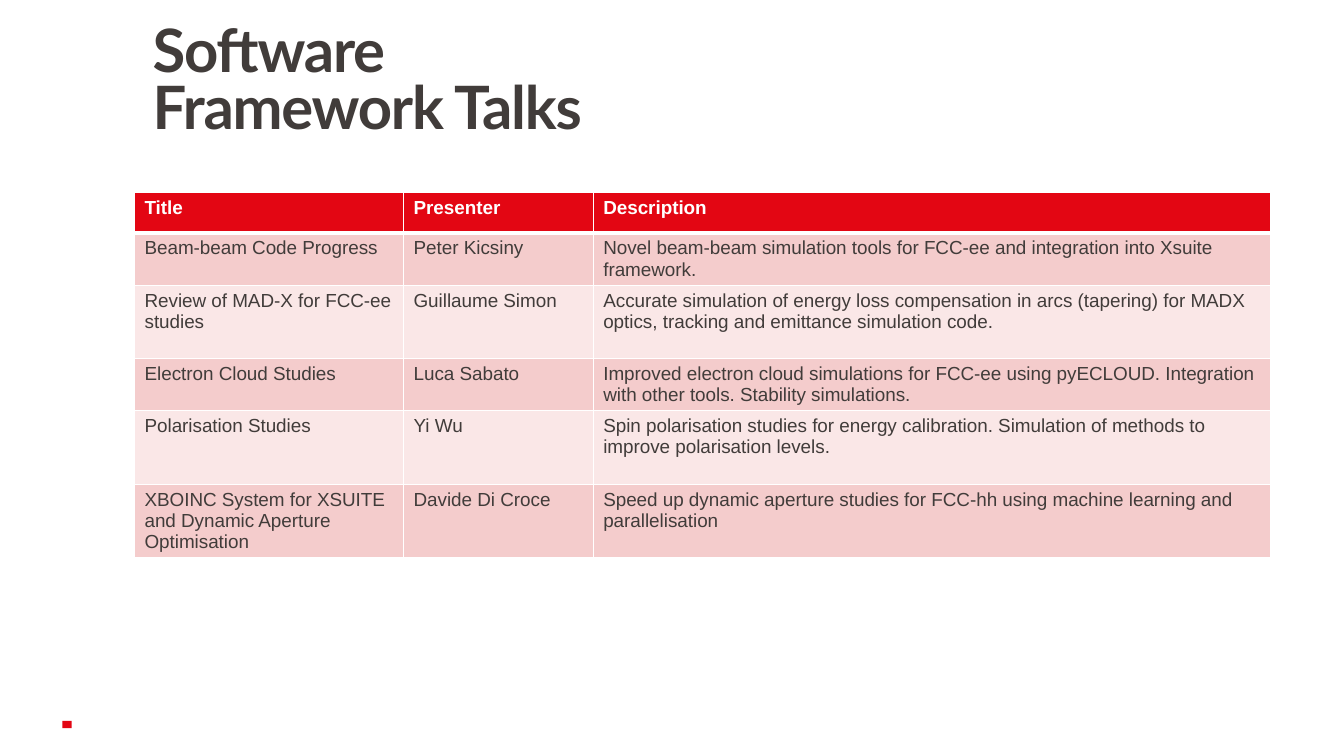
from lxml import etree
from pptx import Presentation
from pptx.dml.color import RGBColor
from pptx.enum.shapes import MSO_SHAPE
from pptx.enum.text import MSO_ANCHOR
from pptx.oxml.ns import qn
from pptx.util import Cm, Pt

RECT = MSO_SHAPE.RECTANGLE
TOP = MSO_ANCHOR.TOP
COLORS = {"red": "E30613", "dark": "413C3A", "white": "FFFFFF",
          "rose": "F4CCCC", "pale": "FAE7E7"}

HEAD = ("Title", "Presenter", "Description")
TALKS = [
    ("Beam-beam Code Progress", "Peter Kicsiny",
     "Novel beam-beam simulation tools for FCC-ee and integration into Xsuite framework."),
    ("Review of MAD-X for FCC-ee studies", "Guillaume Simon",
     "Accurate simulation of energy loss compensation in arcs (tapering) for MADX optics, "
     "tracking and emittance simulation code."),
    ("Electron Cloud Studies", "Luca Sabato",
     "Improved electron cloud simulations for FCC-ee using pyECLOUD. Integration with other "
     "tools. Stability simulations."),
    ("Polarisation Studies", "Yi Wu",
     "Spin polarisation studies for energy calibration. Simulation of methods to improve "
     "polarisation levels."),
    ("XBOINC System for XSUITE and Dynamic Aperture Optimisation", "Davide Di Croce",
     "Speed up dynamic aperture studies for FCC-hh using machine learning and parallelisation"),
]
WIDTHS = (6.78, 4.78, 17.07)
HEIGHTS = (1.03, 1.31, 1.85, 1.31, 1.85, 1.85)


def rgb(name):
    return RGBColor.from_string(COLORS[name])


def write(frame, text, size=13.5, font="Arial", color="dark", bold=False,
          spacing=None, track=None):
    para = frame.paragraphs[0]
    if spacing:
        para.line_spacing = spacing
    run = para.add_run()
    run.text = text
    run.font.size = Pt(size)
    run.font.name = font
    run.font.bold = bold
    run.font.color.rgb = rgb(color)
    if track:
        run.font._element.set("spc", str(round(track * 100)))


def border(cell, side, width):
    line = etree.SubElement(cell._tc.get_or_add_tcPr(), qn(f"a:ln{side}"),
                            w=str(Pt(width)))
    fill = etree.SubElement(line, qn("a:solidFill"))
    etree.SubElement(fill, qn("a:srgbClr"), val=COLORS["white"])


class Deck:
    def __init__(self):
        self.file = Presentation()
        self.file.slide_width, self.file.slide_height = Cm(33.87), Cm(19.05)
        self.slide = self.file.slides.add_slide(self.file.slide_layouts[6])

    def mark(self, x, y, w, h, color, turn=0):
        shape = self.slide.shapes.add_shape(RECT, Cm(x), Cm(y), Cm(w), Cm(h))
        shape.shadow.inherit = False
        shape.fill.solid()
        shape.fill.fore_color.rgb = rgb(color)
        shape.line.fill.background()
        shape.rotation = turn

    def title(self, x, y, w, h, text, **style):
        frame = self.slide.shapes.add_textbox(Cm(x), Cm(y), Cm(w), Cm(h)).text_frame
        frame.word_wrap = True
        frame.vertical_anchor = TOP
        frame.margin_left, frame.margin_top = Cm(0.5), Cm(0)
        frame.margin_right, frame.margin_bottom = Cm(0.2), Cm(0.13)
        write(frame, text, **style)

    def table(self, x, y, widths, heights, rows):
        table = self.slide.shapes.add_table(
            len(rows), len(widths), Cm(x), Cm(y),
            Cm(sum(widths)), Cm(sum(heights))).table
        for col, width in zip(table.columns, widths):
            col.width = Cm(width)
        for row, height in zip(table.rows, heights):
            row.height = Cm(height)
        for r, row in enumerate(rows):
            for c, text in enumerate(row):
                self.cell(table.cell(r, c), r, text)

    def cell(self, cell, row, text):
        head = row == 0
        # Borders come before the fill in the cell properties
        for side in "LRTB":
            thick = (head and side == "B") or (row == 1 and side == "T")
            border(cell, side, 3 if thick else 1)
        cell.fill.solid()
        cell.fill.fore_color.rgb = rgb("red" if head else "rose" if row % 2 else "pale")
        write(cell.text_frame, text, color="white" if head else "dark", bold=head)


def main():
    deck = Deck()
    # Footer mark
    deck.mark(1.6, 18.14, 0.18, 0.23, "red", turn=270)
    # Talks
    deck.table(3.39, 4.84, WIDTHS, HEIGHTS, [HEAD, *TALKS])
    # Heading
    deck.title(3.35, 0.66, 13.59, 3.96, "Software Framework Talks", size=42.7,
               font="Lato", bold=True, spacing=0.8, track=-0.9)
    deck.file.save("out.pptx")


if __name__ == "__main__":
    main()
